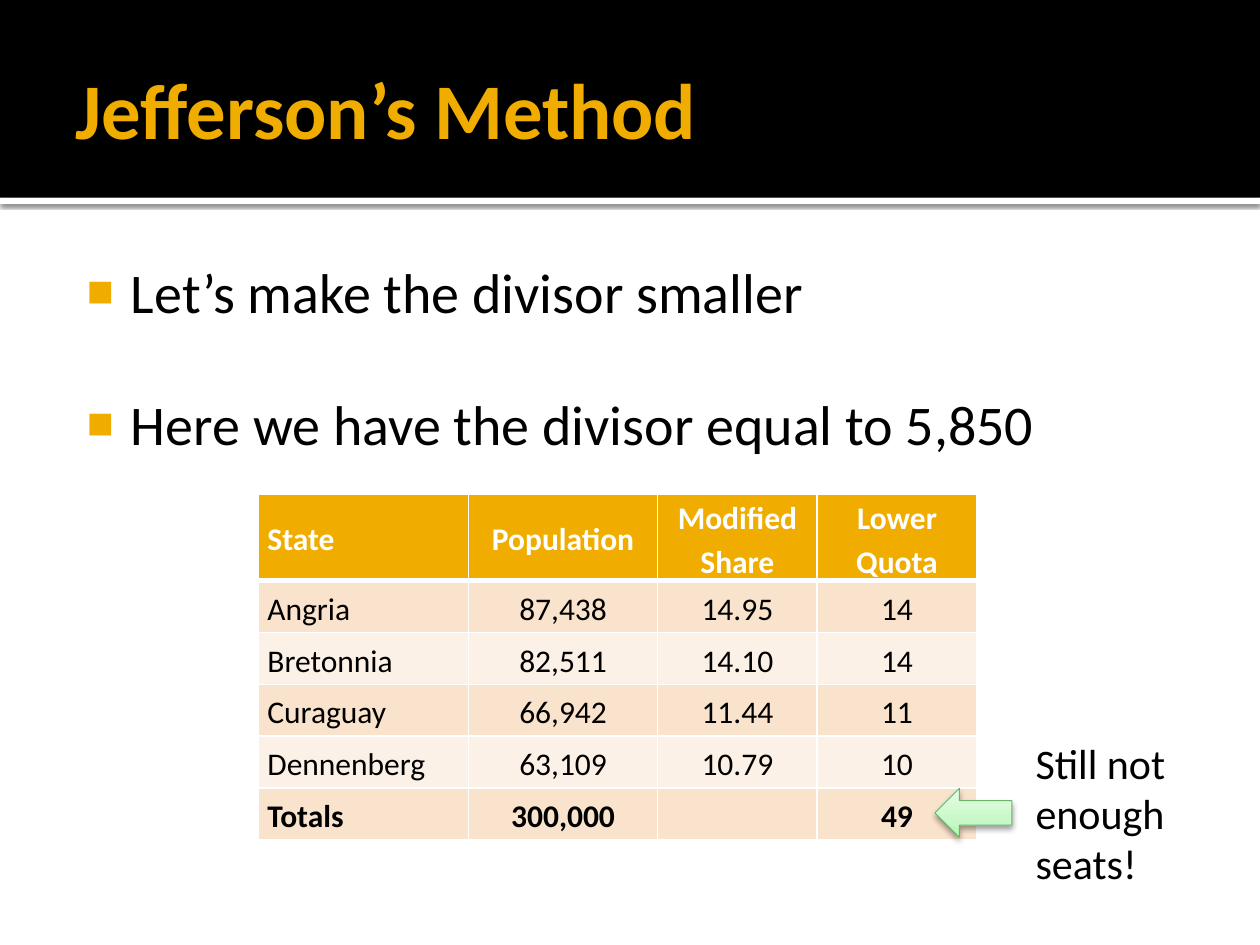
from dataclasses import dataclass
from typing import NamedTuple

import lxml.etree
import pptx
import pptx.dml.color
import pptx.enum.shapes
import pptx.enum.text
import pptx.oxml.ns
import pptx.util

Pt = pptx.util.Pt
qn = pptx.oxml.ns.qn
SubElement = lxml.etree.SubElement
SHAPE = pptx.enum.shapes.MSO_SHAPE
ALIGN = pptx.enum.text.PP_ALIGN
ANCHOR = pptx.enum.text.MSO_ANCHOR


@dataclass(frozen=True)
class Theme:
    font: str = "Calibri"
    black: str = "000000"
    white: str = "FFFFFF"
    accent: str = "F0AD00"
    row_bands: tuple = ("F9E3CC", "FCF1E7")
    arrow_stops: tuple = ((0, "B0F6B1"), (35, "C8F8C8"), (100, "E9FDE9"))
    arrow_line: str = "67B569"
    title_size: float = 45
    body_size: float = 32
    table_size: float = 18
    note_size: float = 24


class Box(NamedTuple):
    left: float
    top: float
    width: float
    height: float

    def lengths(self) -> list:
        return [Pt(value) for value in self]


class Shadow(NamedTuple):
    opacity: int
    blur: float
    distance: float


THEME = Theme()
COLUMN_WIDTHS = (120, 108, 91.2, 91.2)
HEADER_HEIGHT, ROW_HEIGHT = 49, 29.6
ROWS = (
    ("State", "Population", "Modified Share", "Lower Quota"),
    ("Angria", "87,438", "14.95", "14"),
    ("Bretonnia", "82,511", "14.10", "14"),
    ("Curaguay", "66,942", "11.44", "11"),
    ("Dennenberg", "63,109", "10.79", "10"),
    ("Totals", "300,000", "", "49"),
)
POINTS = ("Let’s make the divisor smaller", "Here we have the divisor equal to 5,850")


def rgb(color: str):
    return pptx.dml.color.RGBColor.from_string(color)


def style(paragraph, size: float, color: str, bold: bool = False) -> None:
    font = paragraph.font
    font.name, font.size, font.bold = THEME.font, Pt(size), bold
    font.color.rgb = rgb(color)


def set_insets(frame, left: float, top: float, right: float, bottom: float) -> None:
    frame.margin_left, frame.margin_top = Pt(left), Pt(top)
    frame.margin_right, frame.margin_bottom = Pt(right), Pt(bottom)


def add_filled_shape(slide, kind, box: Box, color: str, shadow: Shadow | None = None):
    """Add a borderless shape, with an optional shadow falling straight down."""
    shape = slide.shapes.add_shape(kind, *box.lengths())
    shape.fill.solid()
    shape.fill.fore_color.rgb = rgb(color)
    shape.line.fill.background()
    shape.shadow.inherit = False
    if shadow:
        effects = shape._element.spPr.find(qn("a:effectLst"))
        outer = SubElement(effects, qn("a:outerShdw"), blurRad=str(int(Pt(shadow.blur))),
                           dist=str(int(Pt(shadow.distance))), dir="5400000",
                           algn="ctr", rotWithShape="0")
        tone = SubElement(outer, qn("a:srgbClr"), val=THEME.black)
        SubElement(tone, qn("a:alpha"), val=str(shadow.opacity * 1000))
    return shape


def add_header(slide) -> None:
    add_filled_shape(slide, SHAPE.RECTANGLE, Box(0, 113, 720, 3.6), THEME.white,
                     Shadow(60, 2.5, 0.8))
    add_filled_shape(slide, SHAPE.RECTANGLE, Box(0, 0, 720, 113), THEME.black)
    title = slide.shapes.title
    slide.shapes._spTree.append(title._element)  # bring the title in front of the band
    title.left, title.top, title.width, title.height = Box(36, 12.24, 648, 98.64).lengths()
    frame = title.text_frame
    frame.text = "Jefferson’s Method"
    frame.vertical_anchor = ANCHOR.MIDDLE
    set_insets(frame, 7.2, 3.6, 3.6, 3.6)
    frame.paragraphs[0].alignment = ALIGN.LEFT
    style(frame.paragraphs[0], THEME.title_size, THEME.accent, bold=True)


def add_bullet(paragraph) -> None:
    properties = paragraph._p.get_or_add_pPr()
    properties.set("marL", str(int(Pt(34.56))))
    properties.set("indent", str(int(Pt(-25.2))))
    color = SubElement(properties, qn("a:buClr"))
    SubElement(color, qn("a:srgbClr"), val=THEME.accent)
    SubElement(properties, qn("a:buSzPct"), val="80000")
    SubElement(properties, qn("a:buFont"), typeface="Arial")
    SubElement(properties, qn("a:buChar"), char="■")


def add_points(slide) -> None:
    frame = slide.shapes.add_textbox(*Box(36, 139.68, 648, 364.32).lengths()).text_frame
    frame.word_wrap = True
    set_insets(frame, 4.32, 7.2, 7.2, 3.6)
    frame.text = "\n".join(POINTS)
    for index, paragraph in enumerate(frame.paragraphs):
        if index:
            paragraph.space_before = Pt(37.5)
        add_bullet(paragraph)
        style(paragraph, THEME.body_size, THEME.black)


def set_borders(cell, top: float, bottom: float) -> None:
    properties = cell._tc.get_or_add_tcPr()
    for side, width in (("L", 1), ("R", 1), ("T", top), ("B", bottom)):
        line = SubElement(properties, qn(f"a:ln{side}"), w=str(int(Pt(width))))
        fill = SubElement(line, qn("a:solidFill"))
        SubElement(fill, qn("a:srgbClr"), val=THEME.white)


def fill_cell(cell, text: str, row: int, column: int) -> None:
    header = row == 0
    set_borders(cell, top=3 if row == 1 else 1, bottom=3 if header else 1)
    cell.fill.solid()
    cell.fill.fore_color.rgb = rgb(THEME.accent if header else THEME.row_bands[(row - 1) % 2])
    cell.vertical_anchor = ANCHOR.MIDDLE
    set_insets(cell, 5.04, 0, 5.04, 0)
    cell.text = text
    paragraph = cell.text_frame.paragraphs[0]
    paragraph.line_spacing = 1.15
    paragraph.alignment = ALIGN.CENTER if column else ALIGN.LEFT
    style(paragraph, THEME.table_size, THEME.white if header else THEME.black,
          bold=row in (0, len(ROWS) - 1))


def add_quota_table(slide) -> None:
    heights = [HEADER_HEIGHT] + [ROW_HEIGHT] * (len(ROWS) - 1)
    box = Box(147.8, 282.2, sum(COLUMN_WIDTHS), sum(heights))
    table = slide.shapes.add_table(len(ROWS), len(COLUMN_WIDTHS), *box.lengths()).table
    for column, width in zip(table.columns, COLUMN_WIDTHS):
        column.width = Pt(width)
    for row, height in zip(table.rows, heights):
        row.height = Pt(height)
    for row, values in enumerate(ROWS):
        for column, text in enumerate(values):
            fill_cell(table.cell(row, column), text, row, column)


def add_seat_note(slide) -> None:
    arrow = add_filled_shape(slide, SHAPE.LEFT_ARROW, Box(534.24, 450.5, 44, 28),
                             THEME.white, Shadow(38, 3.5, 2))
    arrow.line.color.rgb = rgb(THEME.arrow_line)
    arrow.line.width = Pt(0.5)
    arrow.fill.gradient()
    arrow.fill.gradient_angle = 90
    stops = arrow._element.spPr.find(qn("a:gradFill")).find(qn("a:gsLst"))
    for stop in list(stops):
        stops.remove(stop)
    for position, color in THEME.arrow_stops:
        stop = SubElement(stops, qn("a:gs"), pos=str(position * 1000))
        SubElement(stop, qn("a:srgbClr"), val=color)

    frame = slide.shapes.add_textbox(*Box(584.64, 417.6, 118.8, 94.32).lengths()).text_frame
    frame.word_wrap = True
    frame.auto_size = pptx.enum.text.MSO_AUTO_SIZE.SHAPE_TO_FIT_TEXT
    frame.text = "Still not enough seats!"
    style(frame.paragraphs[0], THEME.note_size, THEME.black)


def main() -> None:
    presentation = pptx.Presentation()
    presentation.slide_width, presentation.slide_height = Pt(720), Pt(540)
    slide = presentation.slides.add_slide(presentation.slide_layouts.get_by_name("Title Only"))
    add_header(slide)
    add_points(slide)
    add_quota_table(slide)
    add_seat_note(slide)
    presentation.save("out.pptx")


if __name__ == "__main__":
    main()
